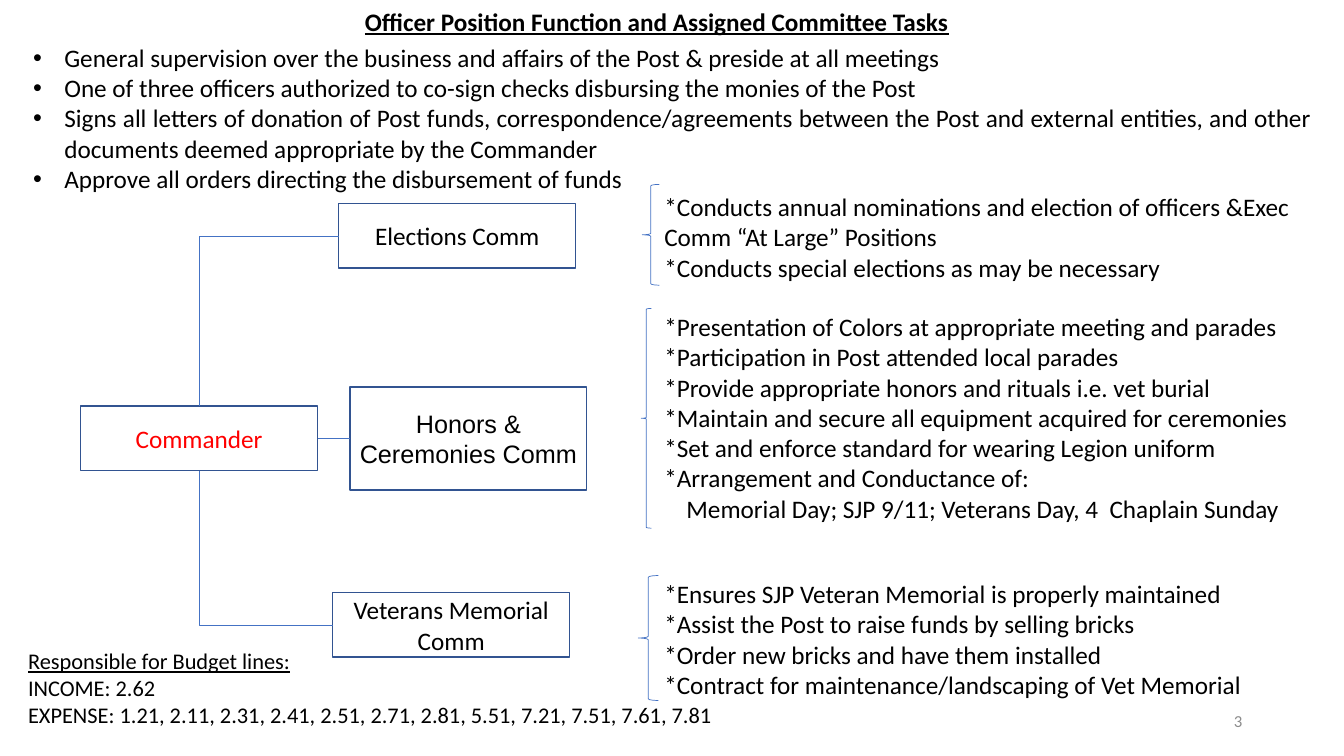
from dataclasses import dataclass

import pptx
import pptx.dml.color
import pptx.enum.shapes
import pptx.enum.text
import pptx.oxml
import pptx.oxml.ns
import pptx.util

Inches = pptx.util.Inches
Align = pptx.enum.text.PP_ALIGN
Anchor = pptx.enum.text.MSO_ANCHOR
AutoSize = pptx.enum.text.MSO_AUTO_SIZE
Preset = pptx.enum.shapes.MSO_SHAPE
ConnectorType = pptx.enum.shapes.MSO_CONNECTOR

BLACK, RED, GREY = "000000", "FF0000", "8C8C8C"
BOX_LINE, THIN_LINE = "325491", "4472C4"
TOP, LEFT, BOTTOM, RIGHT = range(4)
BOX_WIDTH = 2.35
TASKS_LEFT = 6.49


@dataclass
class Area:
    left: float
    top: float
    width: float
    height: float

    def lengths(self) -> list:
        return [Inches(n) for n in (self.left, self.top, self.width, self.height)]


@dataclass
class Line:
    text: str
    size: int = 18
    color: str = BLACK
    font: str = "Calibri"
    bold: bool = False
    underline: bool = False
    align: Align = Align.LEFT
    indent: float = 0
    bullet: bool = False


@dataclass
class Committee:
    name: Line
    box: Area
    brace: Area
    task_area: Area
    tasks: list
    commander_side: int


def rgb(color: str):
    return pptx.dml.color.RGBColor.from_string(color)


def write_lines(frame, lines: list) -> None:
    for number, line in enumerate(lines):
        paragraph = frame.add_paragraph() if number else frame.paragraphs[0]
        paragraph.alignment = line.align
        if line.indent:
            properties = paragraph._p.get_or_add_pPr()
            properties.set("marL", str(Inches(line.indent)))
            if line.bullet:
                properties.set("indent", str(-Inches(line.indent)))
                namespace = pptx.oxml.ns.nsdecls("a")
                for tag in ('buFont {} typeface="Arial"', 'buChar {} char="•"'):
                    properties.append(
                        pptx.oxml.parse_xml(f"<a:{tag.format(namespace)}/>"))
        run = paragraph.add_run()
        run.text = line.text
        run.font.name = line.font
        run.font.size = pptx.util.Pt(line.size)
        run.font.bold = line.bold
        run.font.underline = line.underline
        run.font.color.rgb = rgb(line.color)


def add_text(slide, area: Area, lines: list, wrap: bool = True,
             grow: bool = True, anchor: Anchor = Anchor.TOP) -> None:
    frame = slide.shapes.add_textbox(*area.lengths()).text_frame
    frame.word_wrap = wrap
    frame.auto_size = AutoSize.SHAPE_TO_FIT_TEXT if grow else AutoSize.NONE
    frame.vertical_anchor = anchor
    write_lines(frame, lines)


def add_outline(slide, preset: Preset, area: Area, color: str, weight: float):
    """Add an unfilled preset shape."""
    shape = slide.shapes.add_shape(preset, *area.lengths())
    shape.shadow.inherit = False
    shape.fill.background()
    shape.line.color.rgb = rgb(color)
    shape.line.width = pptx.util.Pt(weight)
    return shape


def add_box(slide, area: Area, name: Line):
    box = add_outline(slide, Preset.RECTANGLE, area, BOX_LINE, 1)
    box.text_frame.word_wrap = True
    box.text_frame.vertical_anchor = Anchor.MIDDLE
    write_lines(box.text_frame, [name])
    return box


def join(slide, committee_box, commander_box, side: int) -> None:
    """Join a committee's left side to one side of the commander."""
    straight = side == RIGHT
    kind = ConnectorType.STRAIGHT if straight else ConnectorType.ELBOW
    connector = slide.shapes.add_connector(kind, 0, 0, 0, 0)
    connector.begin_connect(committee_box, LEFT)
    connector.end_connect(commander_box, side)
    connector.line.color.rgb = rgb(THIN_LINE)
    connector.line.width = pptx.util.Pt(0.5)
    properties = connector._element.spPr
    if not straight:
        geometry = properties.find(pptx.oxml.ns.qn("a:prstGeom"))
        geometry.set("prst", "bentConnector2")
    namespace = pptx.oxml.ns.nsdecls("a")
    properties.append(pptx.oxml.parse_xml(f"<a:effectLst {namespace}/>"))


def centered(text: str, **style) -> Line:
    return Line(text, align=Align.CENTER, **style)


DUTIES = [
    "General supervision over the business and affairs of the Post & preside at all meetings",
    "One of three officers authorized to co-sign checks disbursing the monies of the Post",
    "Signs all letters of donation of Post funds, correspondence/agreements between the Post "
    "and external entities, and other documents deemed appropriate by the Commander",
    "Approve all orders directing the disbursement of funds",
]
BUDGET = [
    Line("Responsible for Budget lines:", 16, underline=True),
    Line("INCOME: 2.62", 16),
    Line("EXPENSE: 1.21, 2.11, 2.31, 2.41, 2.51, 2.71, 2.81, 5.51, 7.21, 7.51, 7.61, 7.81", 16),
]
COMMITTEES = [
    Committee(
        centered("Elections Comm"), Area(3.36, 2.02, BOX_WIDTH, 0.64),
        Area(6.37, 1.83, 0.17, 1), Area(TASKS_LEFT, 1.85, 6.61, 1.01),
        [Line("*Conducts annual nominations and election of officers &Exec Comm "
              "“At Large” Positions"),
         Line("*Conducts special elections as may be necessary")],
        TOP),
    Committee(
        centered("Honors & Ceremonies Comm", font="Arial"),
        Area(3.47, 3.84, BOX_WIDTH, 1.02),
        Area(6.36, 3.06, 0.1, 2.18), Area(TASKS_LEFT, 3.04, 6.6, 2.52),
        [Line("*Presentation of Colors at appropriate meeting and parades"),
         Line("*Participation in Post attended local parades"),
         Line("*Provide appropriate honors and rituals i.e. vet burial"),
         Line("*Maintain and secure all equipment acquired for ceremonies"),
         Line("*Set and enforce standard for wearing Legion uniform "
              "*Arrangement and Conductance of:"),
         Line("Memorial Day; SJP 9/11; Veterans Day, 4  Chaplain Sunday", indent=0.22)],
        RIGHT),
    Committee(
        centered("Veterans Memorial Comm"), Area(3.3, 5.88, BOX_WIDTH, 0.64),
        Area(6.33, 5.71, 0.2, 1.24), Area(TASKS_LEFT, 5.69, 6.17, 1.31),
        [Line("*Ensures SJP Veteran Memorial is properly maintained"),
         Line("*Assist the Post to raise funds by selling bricks"),
         Line("*Order new bricks and have them installed"),
         Line("*Contract for maintenance/landscaping of Vet Memorial")],
        BOTTOM),
]


def main() -> None:
    presentation = pptx.Presentation()
    presentation.slide_width = Inches(13.33)
    presentation.slide_height = Inches(7.5)
    slide = presentation.slides.add_slide(presentation.slide_layouts[6])

    title = Line("Officer Position Function and Assigned Committee Tasks",
                 bold=True, underline=True)
    add_text(slide, Area(3.52, 0.01, 5.99, 0.4), [title], wrap=False)
    add_text(slide, Area(0.23, 0.37, 12.88, 1.62),
             [Line(duty, align=Align.JUSTIFY, indent=0.31, bullet=True) for duty in DUTIES])

    commander = add_box(slide, Area(0.8, 4.03, BOX_WIDTH, 0.64),
                        centered("Commander", color=RED))
    for committee in COMMITTEES:
        box = add_box(slide, committee.box, committee.name)
        join(slide, box, commander, committee.commander_side)
        add_outline(slide, Preset.LEFT_BRACE, committee.brace, THIN_LINE, 0.5)
        add_text(slide, committee.task_area, committee.tasks)

    add_text(slide, Area(0.18, 6.37, 7.72, 0.91), BUDGET)
    add_text(slide, Area(9.42, 6.95, 3, 0.4), [Line("3", 12, GREY, align=Align.RIGHT)],
             grow=False, anchor=Anchor.MIDDLE)
    presentation.save("out.pptx")


if __name__ == "__main__":
    main()
